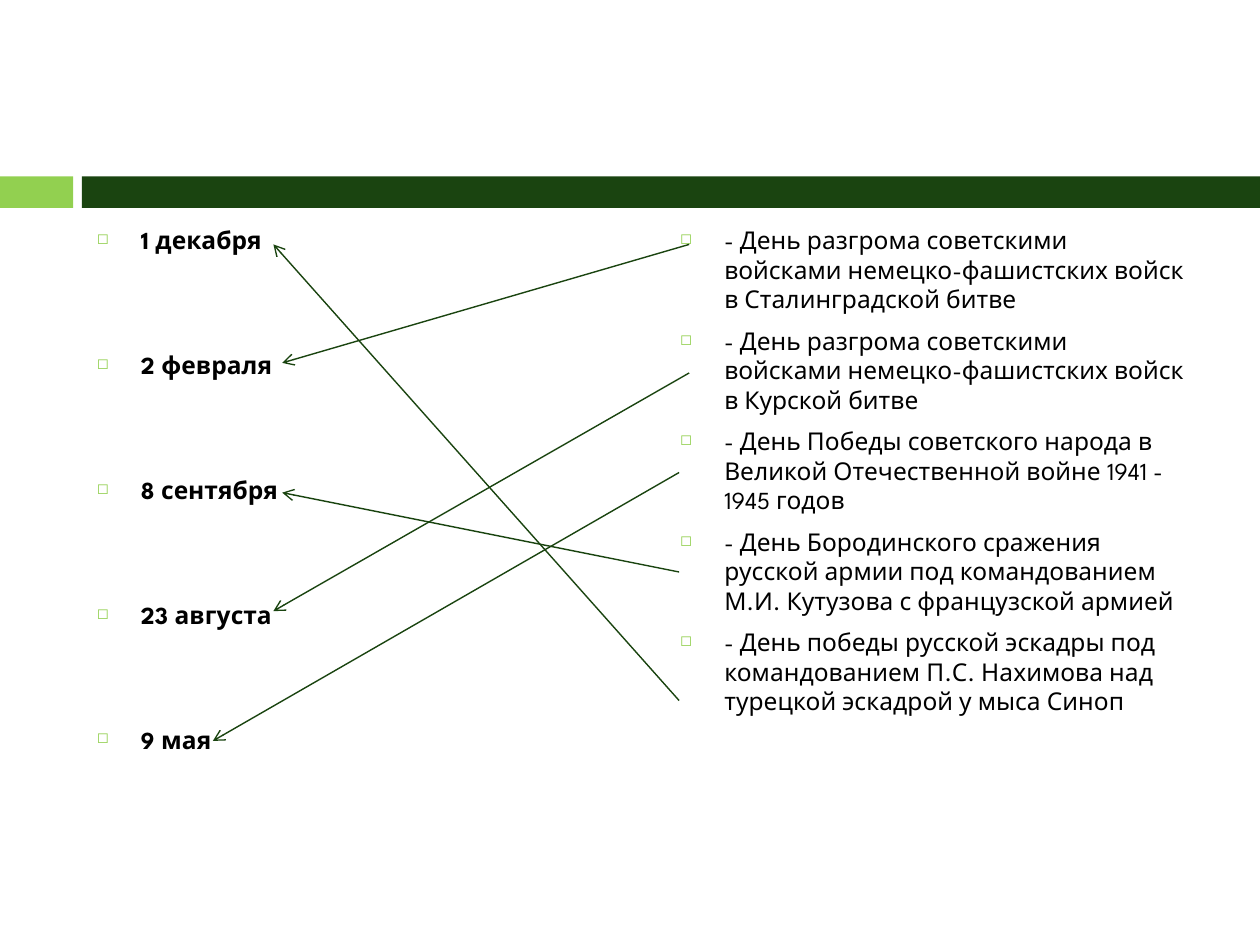
from lxml import etree
from pptx import Presentation, util as u
from pptx.dml.color import RGBColor
from pptx.enum import shapes, text
from pptx.oxml.ns import qn

HUES = {"lime": "92D050", "green": "1A4410", "ink": "000000"}
FONT = "League Spartan"


def hue(name):
    return RGBColor.from_string(HUES[name])


class Page:
    """Current slide on a grid of 100 columns by 75 rows."""

    def __init__(self, deck):
        self.col = deck.slide_width / 100
        self.row = deck.slide_height / 75
        self.slide = deck.slides.add_slide(deck.slide_layouts[6])

    def grid(self, x, y):
        return round(x * self.col), round(y * self.row)

    def bar(self, x, y, w, h, fill):
        box = self.slide.shapes.add_shape(
            shapes.MSO_SHAPE.RECTANGLE, *self.grid(x, y), *self.grid(w, h))
        box.shadow.inherit = False
        box.fill.solid()
        box.fill.fore_color.rgb = hue(fill)
        box.line.fill.background()

    def bullet(self, para):
        props = para._p.get_or_add_pPr()
        props.set("marL", str(u.Inches(0.35)))
        props.set("indent", str(u.Inches(-0.35)))
        tint = etree.SubElement(props, qn("a:buClr"))
        etree.SubElement(tint, qn("a:srgbClr"), val=HUES["lime"])
        etree.SubElement(props, qn("a:buSzPct"), val="60000")
        etree.SubElement(props, qn("a:buChar"), char="◻")

    def list(self, x, y, w, h, items, gap, bold=False):
        frame = self.slide.shapes.add_textbox(
            *self.grid(x, y), *self.grid(w, h)).text_frame
        frame.word_wrap = True
        frame.auto_size = text.MSO_AUTO_SIZE.NONE
        for i, item in enumerate(items):
            para = frame.add_paragraph() if i else frame.paragraphs[0]
            para.text = item
            self.bullet(para)
            if i:
                para.space_before = u.Pt(gap)
            font = para.font
            font.name, font.size, font.bold = FONT, u.Pt(14), bold
            font.color.rgb = hue("ink")

    def arrow(self, start, end):
        link = self.slide.shapes.add_connector(
            shapes.MSO_CONNECTOR.STRAIGHT, *self.grid(*start), *self.grid(*end))
        link.line.color.rgb = hue("green")
        link.line.width = u.Pt(0.79)
        etree.SubElement(link.line._get_or_add_ln(), qn("a:tailEnd"), type="arrow")
        etree.SubElement(link._element.spPr, qn("a:effectLst"))


def main():
    deck = Presentation()
    deck.slide_width, deck.slide_height = u.Inches(10), u.Inches(7.5)
    page = Page(deck)

    # Band across the slide
    page.bar(0, 14, 5.8, 2.5, "lime")
    page.bar(6.5, 14, 93.5, 2.5, "green")

    # Dates on the left, events on the right
    dates = ["1 декабря", "2 февраля", "8 сентября", "23 августа", "9 мая"]
    events = [
        "- День разгрома советскими войсками немецко-фашистских войск в Сталинградской битве",
        "- День разгрома советскими войсками немецко-фашистских войск в Курской битве",
        "- День Победы советского народа в Великой Отечественной войне 1941 - 1945 годов",
        "- День Бородинского сражения русской армии под командованием М.И. Кутузова с французской армией",
        "- День победы русской эскадры под командованием П.С. Нахимова над турецкой эскадрой у мыса Синоп",
    ]
    page.list(6.7, 17.4, 42.5, 50, dates, 54.5, bold=True)
    page.list(53, 17.4, 42.5, 50, events, 7)

    # Arrows from each event to its date
    links = [
        ((53.9, 55.6), (21.7, 19.4)),
        ((54.7, 19.4), (22.4, 28.8)),
        ((53.9, 45.4), (22.4, 39.1)),
        ((54.7, 29.6), (21.7, 48.5)),
        ((53.9, 37.5), (16.9, 58.8)),
    ]
    for event, date in links:
        page.arrow(event, date)

    deck.save("out.pptx")


if __name__ == "__main__":
    main()
